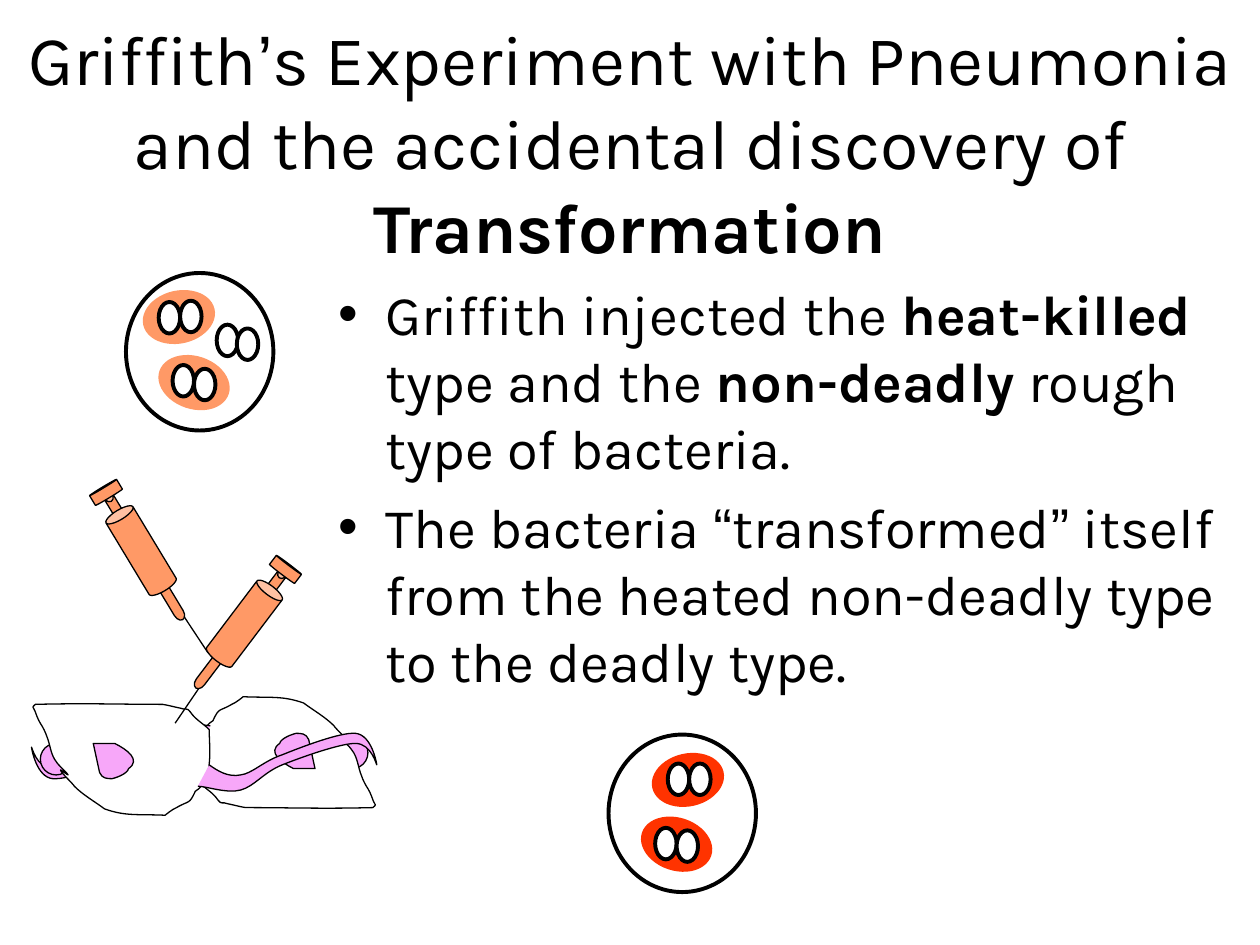
from math import cos, radians, sin

from lxml import etree
from pptx import Presentation
from pptx.dml.color import RGBColor
from pptx.enum import shapes, text
from pptx.oxml.ns import qn
from pptx.util import Inches, Pt

BLACK = RGBColor(0x00, 0x00, 0x00)
WHITE = RGBColor(0xFF, 0xFF, 0xFF)
ORANGE = RGBColor(0xFF, 0x99, 0x66)
RED = RGBColor(0xFF, 0x33, 0x00)
PINK = RGBColor(0xF7, 0xA7, 0xF9)

OVAL = shapes.MSO_SHAPE.OVAL
CAN = shapes.MSO_SHAPE.CAN
THIN, THICK = 0.75, 2.25

TITLE = [[("Griffith", "Karla", False), ("’", "Arial", False),
          ("s Experiment with Pneumonia and the accidental discovery of ", "Karla", False),
          ("Transformation", "Karla", True)]]
FINDINGS = [
    [("Griffith injected the ", "Karla", False), ("heat-killed", "Karla", True),
     (" type and the ", "Karla", False), ("non-deadly", "Karla", True),
     (" rough type of bacteria.", "Karla", False)],
    [("The bacteria ", "Karla", False), ("“", "Arial", False),
     ("transformed", "Karla", False), ("”", "Arial", False),
     (" itself from the heated non-deadly type to the deadly type.", "Karla", False)],
]

MOUSE_BODY = [
    (2.96, 6.41), (2.56, 6.42), (2.29, 6.41), (1.95, 6.41),
    (1.89, 6.40), (1.86, 6.39), (1.81, 6.38), (1.76, 6.36), (1.76, 6.39), (1.73, 6.35),
    (1.69, 6.29), (1.63, 6.26), (1.58, 6.21), (1.58, 6.07), (1.54, 5.81), (1.69, 5.72),
    (1.74, 5.61), (1.74, 5.65), (1.84, 5.59), (1.87, 5.58), (1.93, 5.53), (1.93, 5.53),
    (2.15, 5.54), (2.24, 5.52), (2.41, 5.58), (2.49, 5.64), (2.58, 5.69), (2.65, 5.76),
    (2.66, 5.78), (2.76, 5.87), (2.76, 5.89), (2.77, 5.90), (2.69, 5.84), (2.70, 5.85),
    (2.71, 5.87), (2.78, 5.93), (2.79, 5.95), (2.84, 6.01), (2.84, 6.09), (2.87, 6.16),
    (2.88, 6.19), (2.90, 6.23), (2.92, 6.26), (2.94, 6.29), (2.96, 6.35), (2.96, 6.35),
    (2.98, 6.40), (2.99, 6.38), (2.96, 6.41)]
MOUSE_EAR = [
    (2.33, 6.10), (2.23, 6.05), (2.12, 5.97), (2.22, 5.90),
    (2.23, 5.86), (2.31, 5.83), (2.35, 5.82), (2.39, 5.82), (2.43, 5.82), (2.45, 5.87),
    (2.50, 6.10)]
MOUSE_TAIL = [
    (1.58, 5.93), (1.51, 5.88), (1.43, 5.83), (1.33, 5.85),
    (1.24, 5.86), (1.15, 5.96), (1.00, 6.01), (0.85, 6.07), (0.54, 6.19), (0.42, 6.18),
    (0.29, 6.17), (0.25, 5.94), (0.25, 5.93), (0.25, 5.92), (0.29, 6.10), (0.42, 6.10),
    (0.54, 6.10), (0.85, 5.99), (1.00, 5.93), (1.15, 5.87), (1.22, 5.76), (1.33, 5.73),
    (1.44, 5.70), (1.60, 5.76), (1.67, 5.76)]
MICE_CENTRE = (1.62, 6.0)


def paint(shape, fill, line_width):
    """Give a shape a flat fill and a black outline, or none for width 0."""
    shape.shadow.inherit = False
    shape.fill.solid()
    shape.fill.fore_color.rgb = fill
    if line_width:
        shape.line.color.rgb = BLACK
        shape.line.width = Pt(line_width)
    else:
        shape.line.fill.background()
    return shape


def add_preset(slide, kind, box, fill, line_width=0, rotation=0):
    """Add a painted preset shape in a box of inches."""
    shape = slide.shapes.add_shape(kind, *map(Inches, box))
    shape.rotation = rotation
    return paint(shape, fill, line_width)


def add_outline(slide, points, fill, closed=True):
    """Add a freeform of cubic curves; points left over become straight lines."""
    builder = slide.shapes.build_freeform(*map(Inches, points[0]), scale=1.0)
    builder.add_line_segments([tuple(map(Inches, point)) for point in points[1:]], close=closed)
    shape = builder.convert_to_shape()
    segments = list(shape._element.iter(qn("a:lnTo")))[:len(points) - 1]
    for i in range(0, len(segments) - 2, 3):
        curve = etree.Element(qn("a:cubicBezTo"))
        segments[i].addprevious(curve)
        for segment in segments[i:i + 3]:
            curve.append(segment[0])
            segment.getparent().remove(segment)
    return paint(shape, fill, THIN)


def add_text(placeholder, box, paragraphs, size):
    """Place a placeholder and fill it with styled runs."""
    placeholder.left, placeholder.top, placeholder.width, placeholder.height = map(Inches, box)
    frame = placeholder.text_frame
    frame.word_wrap = True
    frame.auto_size = text.MSO_AUTO_SIZE.NONE
    for index, runs in enumerate(paragraphs):
        paragraph = frame.add_paragraph() if index else frame.paragraphs[0]
        paragraph.font.size = Pt(size)
        paragraph.font.color.rgb = BLACK
        for words, font, bold in runs:
            run = paragraph.add_run()
            run.text = words
            run.font.name = font
            run.font.bold = bold


def add_mouse(slide, turned=False):
    """Draw a mouse, or the same mouse turned half round its neighbour."""
    parts = [
        add_preset(slide, OVAL, (2.67, 5.85, 0.25, 0.25), PINK, THIN),
        add_outline(slide, MOUSE_BODY, WHITE),
        add_outline(slide, MOUSE_EAR, PINK),
        add_outline(slide, MOUSE_TAIL, PINK, closed=False)]
    if turned:
        centre_x, centre_y = map(Inches, MICE_CENTRE)
        for part in parts:
            part.left = 2 * centre_x - part.left - part.width
            part.top = 2 * centre_y - part.top - part.height
            part.rotation = 180


def add_syringe(slide, centre_x, centre_y, angle, needle_ends):
    """Draw a needle and a syringe whose barrel has the given centre and tilt."""
    needle = slide.shapes.add_connector(
        shapes.MSO_CONNECTOR.STRAIGHT, *map(Inches, needle_ends))
    needle.line.color.rgb = BLACK
    needle.line.width = Pt(THIN)
    etree.SubElement(needle._element.spPr, qn("a:effectLst"))
    for distance, width, height, rim in (
            (0.03, 0.08, 1.22, 1.54), (0, 0.25, 0.74, 0.31), (-0.54, 0.25, 0.1, 0.1)):
        x = centre_x - distance * sin(radians(angle))
        y = centre_y + distance * cos(radians(angle))
        can = add_preset(slide, CAN, (x - width / 2, y - height / 2, width, height),
                         ORANGE, THIN, angle)
        can.adjustments[0] = rim


def add_dish(slide, left, top, capsule_colour, capsules, cells):
    """Draw a dish with capsules and cells at offsets from its corner."""
    add_preset(slide, OVAL, (left, top, 1.17, 1.25), WHITE, THICK)
    for x, y, tilt in capsules:
        add_preset(slide, OVAL, (left + x, top + y, 0.58, 0.42), capsule_colour, 0, tilt)
    for x, y in cells:
        add_preset(slide, OVAL, (left + x, top + y, 0.17, 0.25), WHITE, THICK)


def main():
    """Build and save the slide."""
    deck = Presentation()
    deck.slide_width, deck.slide_height = Inches(10), Inches(7.5)
    slide = deck.slides.add_slide(deck.slide_layouts[1])
    add_text(slide.placeholders[1], (31 / 12, 13 / 6, 7.25, 53 / 12), FINDINGS, 32)
    add_text(slide.shapes.title, (0, 0.5, 10, 1.25), TITLE, 40)
    add_mouse(slide)
    add_syringe(slide, 1.12, 4.37, -31.1, (1.65, 5.18, 1.32, 4.68))
    add_mouse(slide, turned=True)
    add_dish(slide, 1, 13 / 6, ORANGE, [(0.25, 0.66, 18.4), (0.13, 0.14, -12.6)],
             [(0.37, 0.73), (0.54, 0.76), (0.26, 0.23), (0.43, 0.22),
              (0.72, 0.41), (0.88, 0.44)])
    add_dish(slide, 4.83, 5.83, RED, [(0.25, 0.66, 18.4), (0.34, 0.15, -12.6)],
             [(0.37, 0.74), (0.54, 0.76), (0.47, 0.23), (0.64, 0.23)])
    add_syringe(slide, 1.94, 4.95, 37.1, (1.39, 5.74, 1.73, 5.24))
    deck.save("out.pptx")


if __name__ == "__main__":
    main()
